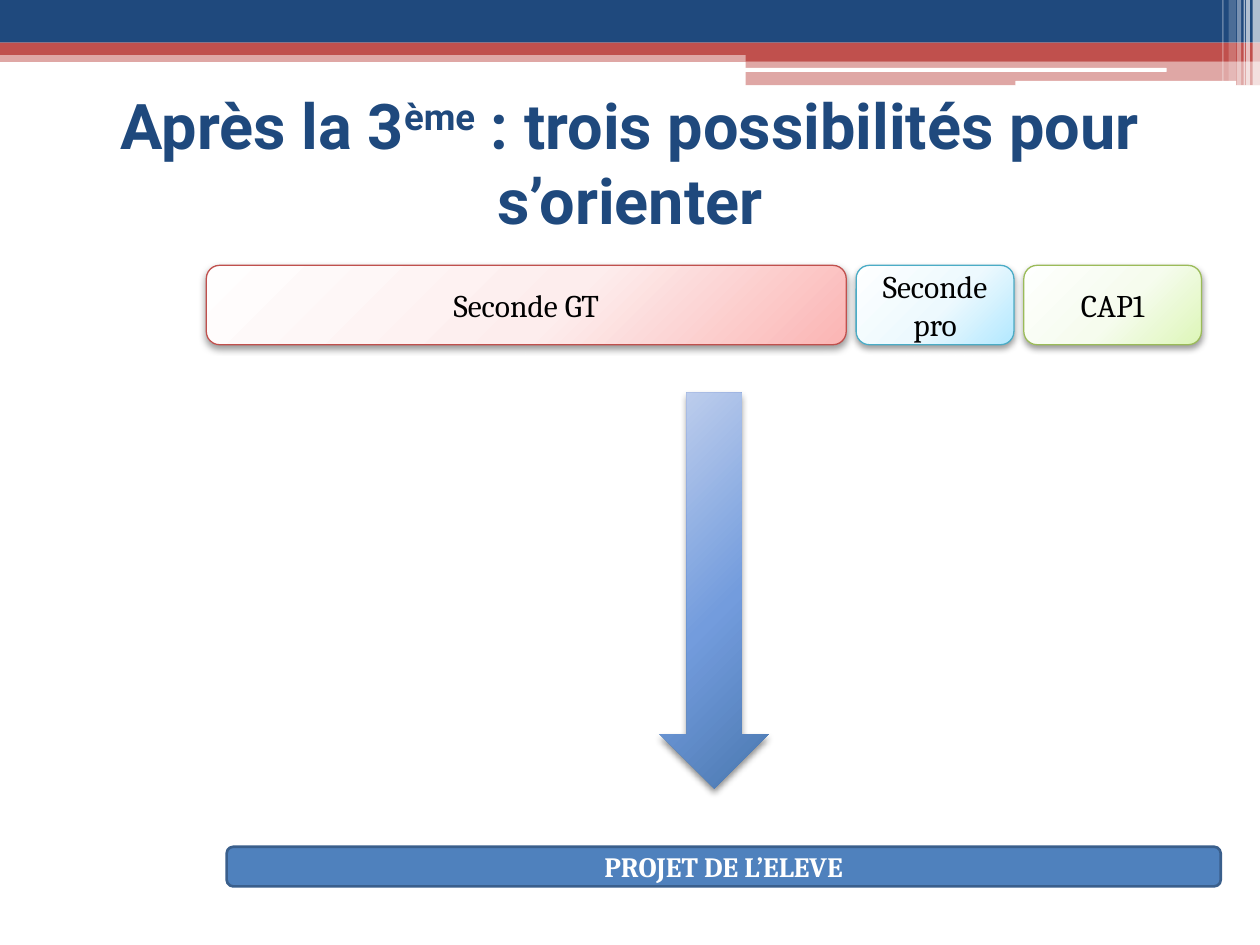
"""Build the slide on the three paths open after the 3ème."""
import lxml.etree
import pptx
import pptx.dml.color
import pptx.enum.shapes
import pptx.enum.text
import pptx.oxml.ns
import pptx.util

Cm, Pt = pptx.util.Cm, pptx.util.Pt
SHAPES = pptx.enum.shapes.MSO_SHAPE

THEME = {
    "navy": "1F497D", "red": "C0504D", "white": "FFFFFF", "black": "000000",
    "blue": "4F81BD", "blue_edge": "3A5F8C",
    "title": {"name": "Roboto", "size": Pt(36), "bold": True},
    "card": {"name": "Cambria", "size": Pt(18), "bold": False},
    "goal": {"name": "Cambria", "size": Pt(16), "bold": True},
    "arrow": ("C4D2EE", "739CDD", "4A78B0"),
}
FRAME = {
    "word_wrap": True,
    "vertical_anchor": pptx.enum.text.MSO_ANCHOR.MIDDLE,
    "margin_left": Cm(0.25), "margin_right": Cm(0.25),
    "margin_top": Cm(0.13), "margin_bottom": Cm(0.13),
}
PAGE_SIZE = (25.4, 19.05)
TITLE = [("Après la 3", 0), ("ème", 30), (" : trois possibilités pour s’orienter", 0)]
TITLE_PLACE = (0, 1.78, 25.4, 2.97)
GOAL = "PROJET DE L’ELEVE"
GOAL_PLACE = (4.57, 17.07, 20.04, 0.8)
ARROW_PLACE = (13.3, 7.92, 2.2, 7.98)

CARDS = [
    ("Seconde GT", 12.9, "C0504D", ("FFFEFE", "FDEDED", "FBB5B4")),
    ("Seconde pro", 3.18, "4BACC6", ("FEFFFF", "EDF9FE", "B2E8FF")),
    ("CAP1", 3.58, "9BBB59", ("FEFFFE", "F6FCEE", "DDF6B8")),
]
CARD_LEFT, CARD_TOP, CARD_HEIGHT, CARD_GAP = 4.16, 5.35, 1.6, 0.2

BANDS = [
    ((0, 1.02, 25.4, 0.23), "red", 50),
    ((0, 0, 25.4, 0.86), "navy", 100),
    ((0, 0.86, 25.4, 0.25), "red", 100),
    ((15.03, 0.99, 10.37, 0.25), "red", 100),
    ((15.03, 1.24, 10.37, 0.48), "red", 50),
]
PILLS = [(15.01, 1.37, 8.51, 0.08), (20.47, 1.63, 4.45, 0.1)]
STRIPES = [
    (25.25, 0.15, 1.73, 65), (25.12, 0.08, 1.73, 65), (25.07, 0.03, 1.73, 60),
    (24.94, 0.08, 1.73, 40), (24.77, 0.15, 1.63, 20), (24.64, 0.03, 1.63, 30),
]


def rgb(value):
    """Turn a hex string into a colour."""
    return pptx.dml.color.RGBColor.from_string(value)


def apply(target, values):
    """Set each named attribute on the target."""
    for name, value in values.items():
        setattr(target, name, value)


def add_child(parent, tag, **attributes):
    """Append a drawing element and return it."""
    child = lxml.etree.SubElement(parent, pptx.oxml.ns.qn("a:" + tag))
    for name, value in attributes.items():
        child.set(name, str(value))
    return child


def add_plain(page, kind, place, fill=None, opacity=100, edge=None, width=0):
    """Add a flat shape without a shadow."""
    shape = page.shapes.add_shape(kind, *map(Cm, place))
    shape.shadow.inherit = False
    if fill:
        shape.fill.solid()
        shape.fill.fore_color.rgb = rgb(fill)
    if opacity < 100:
        colour = shape._element.spPr.find(".//" + pptx.oxml.ns.qn("a:srgbClr"))
        add_child(colour, "alpha", val=opacity * 1000)
    if edge:
        apply(shape.line, {"width": Pt(width)})
        shape.line.color.rgb = rgb(edge)
    else:
        shape.line.fill.background()
    return shape


def add_glossy(page, kind, place, tones, shade, edge=None):
    """Add a shape with a radial gradient and a soft shadow."""
    shape = add_plain(page, kind, place, edge=edge, width=0.75)
    properties = shape._element.spPr
    gradient = lxml.etree.Element(pptx.oxml.ns.qn("a:gradFill"), rotWithShape="1")
    stops = add_child(gradient, "gsLst")
    for position, tone in zip((0, 55, 100), tones):
        add_child(add_child(stops, "gs", pos=position * 1000), "srgbClr", val=tone)
    circle = add_child(gradient, "path", path="circle")
    add_child(circle, "fillToRect", l=-40000, t=-90000, r=140000, b=190000)
    properties.find(pptx.oxml.ns.qn("a:prstGeom")).addnext(gradient)
    effects = properties.find(pptx.oxml.ns.qn("a:effectLst"))
    shadow = add_child(effects, "outerShdw", blurRad=Pt(4), dist=Pt(2),
                       dir=5400000, rotWithShape=0)
    colour = add_child(shadow, "srgbClr", val=THEME["black"])
    add_child(colour, "alpha", val=shade * 1000)
    return shape


def write(box, spans, style, colour):
    """Write one centred paragraph of (text, raise) spans."""
    apply(box.text_frame, FRAME)
    para = box.text_frame.paragraphs[0]
    para.alignment = pptx.enum.text.PP_ALIGN.CENTER
    for text, lift in spans:
        span = para.add_run()
        span.text = text
        apply(span.font, THEME[style])
        span.font.color.rgb = rgb(THEME[colour])
        if lift:
            span.font._element.set("baseline", str(lift * 1000))


def main():
    """Assemble and save the deck."""
    deck = pptx.Presentation()
    apply(deck, dict(zip(("slide_width", "slide_height"), map(Cm, PAGE_SIZE))))
    page = deck.slides.add_slide(deck.slide_layouts[6])

    for place, colour, opacity in BANDS:
        add_plain(page, SHAPES.RECTANGLE, place, THEME[colour], opacity)
    for place in PILLS:
        add_plain(page, SHAPES.ROUNDED_RECTANGLE, place, THEME["white"])
    for left, width, height, opacity in STRIPES:
        add_plain(page, SHAPES.RECTANGLE, (left, 0, width, height),
                  THEME["white"], opacity)

    write(page.shapes.add_textbox(*map(Cm, TITLE_PLACE)), TITLE, "title", "navy")

    left = CARD_LEFT
    for text, width, edge, tones in CARDS:
        card = add_glossy(page, SHAPES.ROUNDED_RECTANGLE,
                          (left, CARD_TOP, width, CARD_HEIGHT), tones, 40, edge)
        write(card, [(text, 0)], "card", "black")
        left += width + CARD_GAP

    goal = add_plain(page, SHAPES.ROUNDED_RECTANGLE, GOAL_PLACE, THEME["blue"],
                     edge=THEME["blue_edge"], width=1.5)
    write(goal, [(GOAL, 0)], "goal", "white")
    add_glossy(page, SHAPES.DOWN_ARROW, ARROW_PLACE, THEME["arrow"], 45)
    deck.save("out.pptx")


if __name__ == "__main__":
    main()
